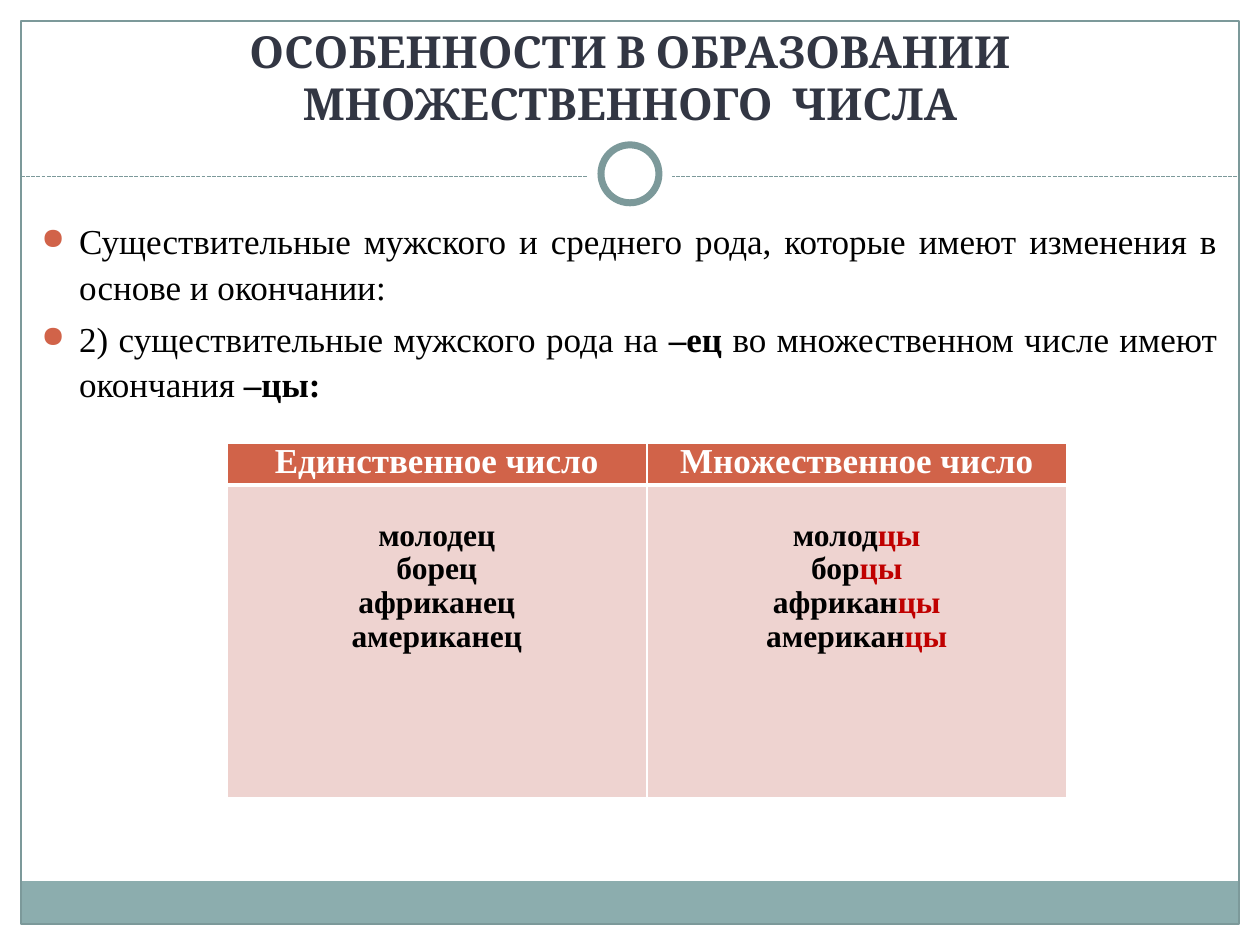
from lxml.etree import SubElement
from pptx import Presentation
from pptx.dml.color import RGBColor
from pptx.enum.dml import MSO_LINE_DASH_STYLE as DASH
from pptx.enum.shapes import MSO_CONNECTOR, MSO_SHAPE
from pptx.enum.text import MSO_ANCHOR as ANCHOR, PP_ALIGN as ALIGN
from pptx.oxml.ns import qn
from pptx.util import Inches, Pt

TITLE = "ОСОБЕННОСТИ В ОБРАЗОВАНИИ МНОЖЕСТВЕННОГО  ЧИСЛА"
# A paragraph is a list of (text, style) runs.
RULES = [
    [("Существительные мужского и среднего рода, которые имеют изменения в "
      "основе и окончании:", "body")],
    [("2) существительные мужского рода на ", "body"), ("–ец", "strong"),
     (" во множественном числе имеют окончания ", "body"), ("–цы:", "strong")],
]
HEADERS = ["Единственное число", "Множественное число"]
SINGULAR = ["молодец", "борец", "африканец", "американец"]
STEMS = ["молод", "бор", "африкан", "американ"]
ENDING = "цы"

COLORS = {"white": "FFFFFF", "black": "000000", "title": "323643",
          "teal": "7C999A", "bar": "8CADAE", "accent": "D16349",
          "cell": "EED3D0", "ending": "C00000"}
SERIF = "Times New Roman"
STYLES = {
    "title": ({"name": "Cambria", "size": Pt(25.2), "bold": True}, "title"),
    "body": ({"name": SERIF, "size": Pt(20), "bold": False}, "black"),
    "strong": ({"name": SERIF, "size": Pt(20), "bold": True}, "black"),
    "header": ({"name": SERIF, "size": Pt(20), "bold": True}, "white"),
    "word": ({"name": SERIF, "size": Pt(18), "bold": True}, "black"),
    "ending": ({"name": SERIF, "size": Pt(18), "bold": True}, "ending"),
}

W, H = 10, 7.5
MARGIN = W / 60
RULE_Y, BAR_H = 1.4, 0.34
RING_Y = 1.38
COL_W, ROW_H = W / 3, [0.33, 2.48]


def rgb(name):
    return RGBColor.from_string(COLORS[name])


def add_shape(s, kind, box, fill=None, line=None, width=0.75):
    sp = s.shapes.add_shape(kind, *map(Inches, box))
    sp.shadow.inherit = False
    if fill:
        sp.fill.solid()
        sp.fill.fore_color.rgb = rgb(fill)
    else:
        sp.fill.background()
    if line:
        sp.line.color.rgb = rgb(line)
        sp.line.width = Pt(width)
    else:
        sp.line.fill.background()


def add_circle(s, size, **look):
    """Circle centred on the divider's medallion."""
    add_shape(s, MSO_SHAPE.OVAL, ((W - size) / 2, RING_Y - size / 2, size, size),
              fill="white", **look)


def add_divider(s):
    c = s.shapes.add_connector(MSO_CONNECTOR.STRAIGHT, Inches(MARGIN), Inches(RULE_Y),
                               Inches(W - MARGIN), Inches(RULE_Y))
    c.line.color.rgb = rgb("teal")
    c.line.width = Pt(0.75)
    c.line.dash_style = DASH.SQUARE_DOT
    SubElement(c._element.spPr, qn("a:effectLst"))


def add_bullet(p):
    pPr = p._p.get_or_add_pPr()
    pPr.set("marL", str(Inches(0.3)))
    pPr.set("indent", str(-Inches(0.3)))
    SubElement(SubElement(pPr, qn("a:buClr")), qn("a:srgbClr"), val=COLORS["accent"])
    SubElement(pPr, qn("a:buSzPct"), val="85000")
    SubElement(pPr, qn("a:buChar"), char="●")


def write(tf, paragraphs, align, spacing=1.0, gap=0, bullets=False):
    for i, runs in enumerate(paragraphs):
        p = tf.add_paragraph() if i else tf.paragraphs[0]
        p.alignment, p.line_spacing = align, spacing
        if i and gap:
            p.space_before = Pt(gap)
        if bullets:
            add_bullet(p)
        for text, style in runs:
            r = p.add_run()
            r.text = text
            formats, color = STYLES[style]
            for key, value in formats.items():
                setattr(r.font, key, value)
            r.font.color.rgb = rgb(color)


def add_text(s, box, paragraphs, align, anchor, **layout):
    tf = s.shapes.add_textbox(*map(Inches, box)).text_frame
    tf.word_wrap = True
    tf.vertical_anchor = anchor
    write(tf, paragraphs, align, **layout)


def set_borders(cell, widths):
    """Put white borders, given as {side: points}, ahead of the cell's fill."""
    tcPr = cell._tc.get_or_add_tcPr()
    for i, (side, width) in enumerate(widths.items()):
        ln = SubElement(tcPr, qn(f"a:ln{side}"), w=str(Pt(width)))
        SubElement(SubElement(ln, qn("a:solidFill")), qn("a:srgbClr"), val=COLORS["white"])
        tcPr.insert(i, ln)


def add_word_table(s):
    words = [[[(w, "word")] for w in SINGULAR],
             [[(stem, "word"), (ENDING, "ending")] for stem in STEMS]]
    rows = [[[[(h, "header")]] for h in HEADERS], words]
    # fill, top margin, (top border, bottom border)
    looks = [("accent", 0, (1, 3)), ("cell", 0.27, (3, 1))]
    table = s.shapes.add_table(2, 2, Inches(1.8), Inches(3.52),
                               Inches(2 * COL_W), Inches(sum(ROW_H))).table
    for col in table.columns:
        col.width = Inches(COL_W)
    for r, (fill, top, (above, below)) in enumerate(looks):
        table.rows[r].height = Inches(ROW_H[r])
        for c, paragraphs in enumerate(rows[r]):
            cell = table.cell(r, c)
            cell.margin_left = cell.margin_right = Inches(0.07)
            cell.margin_top, cell.margin_bottom = Inches(top), 0
            cell.fill.solid()
            cell.fill.fore_color.rgb = rgb(fill)
            set_borders(cell, {"L": 1, "R": 1, "T": above, "B": below})
            write(cell.text_frame, paragraphs, ALIGN.CENTER, spacing=0.97)


def main():
    prs = Presentation()
    prs.slide_width, prs.slide_height = Inches(W), Inches(H)
    s = prs.slides.add_slide(prs.slide_layouts[6])
    inner_w, bottom = W - 2 * MARGIN, H - MARGIN
    add_shape(s, MSO_SHAPE.RECTANGLE, (MARGIN, bottom - BAR_H, inner_w, BAR_H), fill="bar")
    add_shape(s, MSO_SHAPE.RECTANGLE, (MARGIN, MARGIN, inner_w, H - 2 * MARGIN), line="teal")
    add_divider(s)
    add_circle(s, 0.67)
    add_circle(s, 0.46, line="teal", width=4)
    add_text(s, (2 * MARGIN, 0.25, W - 4 * MARGIN, 0.83), [[(TITLE, "title")]],
             ALIGN.CENTER, ANCHOR.BOTTOM)
    add_text(s, (0.23, 1.67, 9.53, 5), RULES, ALIGN.JUSTIFY, ANCHOR.TOP,
             spacing=1.08, gap=4, bullets=True)
    add_word_table(s)
    prs.save("out.pptx")


if __name__ == "__main__":
    main()
